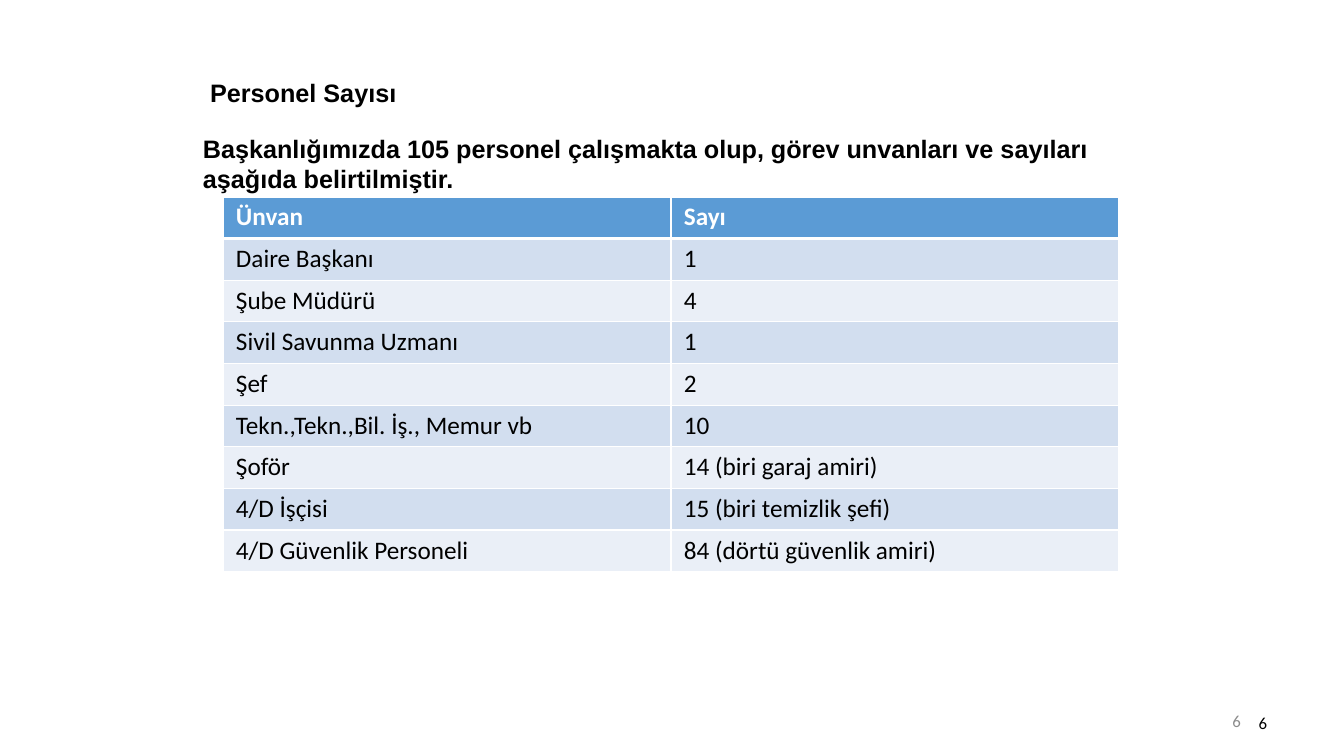
from dataclasses import dataclass

from pptx import Presentation, util as u
from pptx.dml.color import RGBColor
from pptx.enum import text
from pptx.oxml import parse_xml
from pptx.oxml.ns import nsdecls

PX = 914400 / 100.8


@dataclass(frozen=True)
class Theme:
    """Colours, fonts and type sizes of the slide."""
    black: str = "000000"
    white: str = "FFFFFF"
    grey: str = "8C8C8C"
    header: str = "5B9BD5"
    bands: tuple = ("D2DEEF", "EAEFF7")
    heading_font: str = "Arial"
    body_font: str = "Calibri"
    main_size: int = 18
    number_size: int = 12


THEME = Theme()
STAFF = [
    ("Ünvan", "Sayı"),
    ("Daire Başkanı", "1"),
    ("Şube Müdürü", "4"),
    ("Sivil Savunma Uzmanı", "1"),
    ("Şef", "2"),
    ("Tekn.,Tekn.,Bil. İş., Memur vb", "10"),
    ("Şoför", "14 (biri garaj amiri)"),
    ("4/D İşçisi", "15 (biri temizlik şefi)"),
    ("4/D Güvenlik Personeli", "84 (dörtü güvenlik amiri)"),
]


def px(length):
    """Turn a length in px into EMU."""
    return u.Emu(round(length * PX))


def write(frame, words, font, size, color, bold=False,
          align=text.PP_ALIGN.LEFT):
    """Write one formatted run into the first paragraph of a frame."""
    paragraph = frame.paragraphs[0]
    paragraph.alignment = align
    run = paragraph.add_run()
    run.text = words
    run.font.name = font
    run.font.size = u.Pt(size)
    run.font.bold = bold
    run.font.color.rgb = RGBColor.from_string(color)


def set_frame(frame, anchor):
    """Wrap a text frame and anchor its words."""
    frame.word_wrap = True
    frame.auto_size = text.MSO_AUTO_SIZE.NONE
    frame.vertical_anchor = anchor


def write_heading(frame, words):
    """Write a bold heading from the top of a frame."""
    set_frame(frame, text.MSO_ANCHOR.TOP)
    write(frame, words, THEME.heading_font, THEME.main_size, THEME.black, True)


def set_title(slide, words, left, top, width, height):
    """Move the title placeholder and fill it."""
    title = slide.shapes.title
    title.left, title.top = px(left), px(top)
    title.width, title.height = px(width), px(height)
    write_heading(title.text_frame, words)


def add_frame(slide, *box):
    """Add a text box and return its frame."""
    return slide.shapes.add_textbox(*map(px, box)).text_frame


def add_page_number(slide, number, color, anchor, *box):
    """Add a right-aligned page number."""
    frame = add_frame(slide, *box)
    set_frame(frame, anchor)
    write(frame, number, THEME.body_font, THEME.number_size, color,
          align=text.PP_ALIGN.RIGHT)


def set_borders(cell, bottom):
    """Draw white cell borders, with the bottom width in points."""
    properties = cell._tc.get_or_add_tcPr()
    widths = {"L": 1, "R": 1, "T": 1, "B": bottom}
    for index, (side, width) in enumerate(widths.items()):
        properties.insert(index, parse_xml(
            f'<a:ln{side} {nsdecls("a")} w="{u.Pt(width)}"><a:solidFill>'
            f'<a:srgbClr val="{THEME.white}"/></a:solidFill></a:ln{side}>'))


def add_staff_table(slide, rows, *box):
    """Add the staff table with a header and banded rows."""
    table = slide.shapes.add_table(len(rows), len(rows[0]), *map(px, box)).table
    for r, row in enumerate(rows):
        is_header = r == 0
        fill = THEME.header if is_header else THEME.bands[(r - 1) % 2]
        color = THEME.white if is_header else THEME.black
        for c, words in enumerate(row):
            cell = table.cell(r, c)
            cell.margin_left = cell.margin_right = px(13)
            cell.margin_top = cell.margin_bottom = px(5)
            cell.fill.solid()
            cell.fill.fore_color.rgb = RGBColor.from_string(fill)
            set_borders(cell, 3 if is_header else 1)
            write(cell.text_frame, words, THEME.body_font, THEME.main_size,
                  color, is_header)


def main():
    """Build and save the staff slide."""
    deck = Presentation()
    deck.slide_width, deck.slide_height = px(1344), px(756)
    slide = deck.slides.add_slide(deck.slide_layouts[5])
    add_page_number(slide, "6", THEME.grey, text.MSO_ANCHOR.MIDDLE,
                    949, 701, 302, 40)
    add_page_number(slide, "6", THEME.black, text.MSO_ANCHOR.BOTTOM,
                    964, 688, 313, 50)
    write_heading(add_frame(slide, 193, 128, 1005, 71),
                  "Başkanlığımızda 105 personel çalışmakta olup, "
                  "görev unvanları ve sayıları aşağıda belirtilmiştir.")
    add_staff_table(slide, STAFF, 223, 197, 896, 375)
    set_title(slide, "Personel Sayısı", 200, 72, 518, 40)
    deck.save("out.pptx")


if __name__ == "__main__":
    main()
